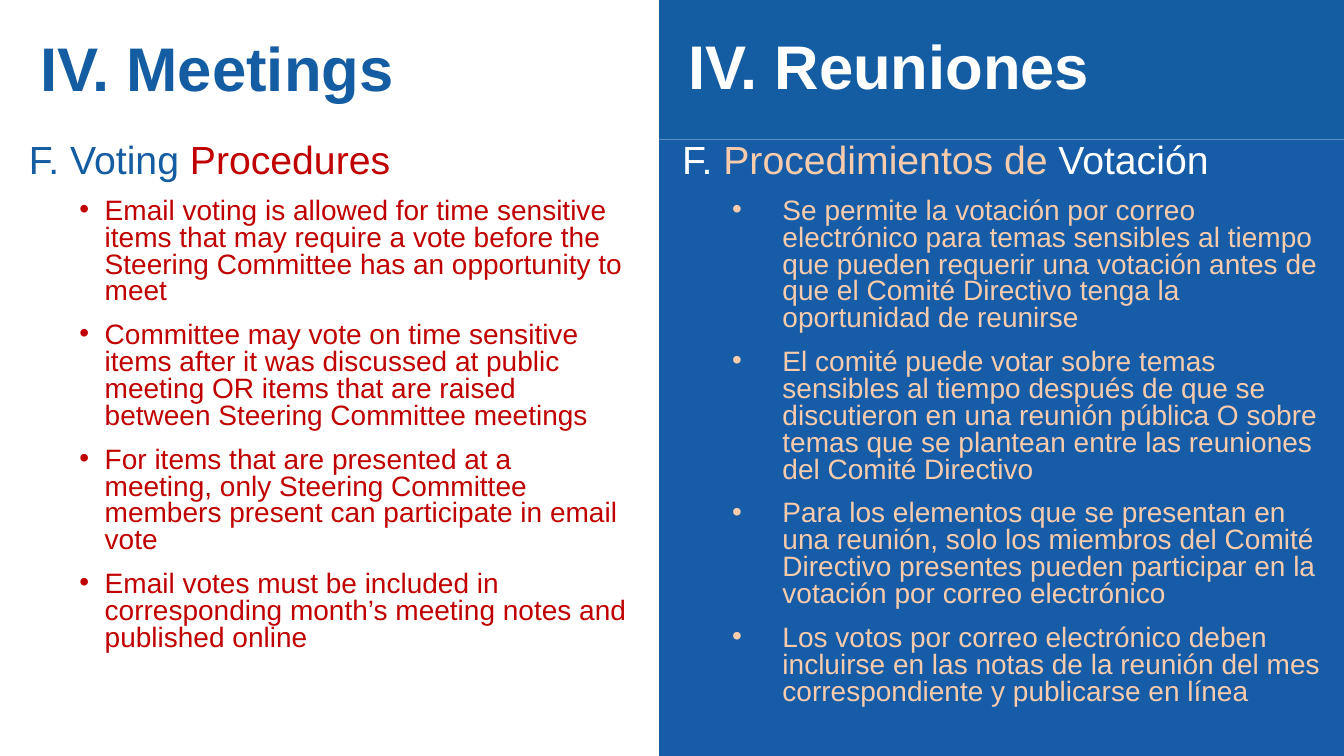
from lxml.etree import SubElement
from pptx import Presentation
from pptx.dml.color import RGBColor
from pptx.enum.shapes import MSO_SHAPE
from pptx.enum.text import MSO_ANCHOR, PP_ALIGN
from pptx.oxml.ns import qn
from pptx.util import Cm, Pt

BLUE, RED, WHITE, PEACH = "145DA2", "C00000", "FFFFFF", "F8CBAD"
WIDE, HIGH, HEAD, SPLIT = 33.87, 19.05, 3.51, 16.61

HEADING = {"line_spacing": 0.9, "alignment": PP_ALIGN.LEFT}
BODY = {"line_spacing": 0.8, "alignment": PP_ALIGN.LEFT,
        "space_before": Pt(6), "space_after": Pt(6)}


def color(target, value):
    target.rgb = RGBColor.from_string(value)


def write(para, runs, size, style, left=0, hang=0, bold=False):
    for name, value in style.items():
        setattr(para, name, value)
    props = para._p.get_or_add_pPr()
    props.set("marL", str(Cm(left)))
    props.set("indent", str(Cm(-hang)))
    if hang:
        SubElement(props, qn("a:buFont"), typeface="Arial")
        SubElement(props, qn("a:buChar"), char="•")
    for text, tint in runs:
        run = para.add_run()
        run.text = text
        for name, value in {"name": "Arial", "size": Pt(size), "bold": bold}.items():
            setattr(run.font, name, value)
        color(run.font.color, tint)


panels = [
    {"title": "IV. Meetings", "ink": BLUE, "accent": RED,
     "head": (0.76, 0.05, 14.4, HEAD), "body": (0.48, HEAD, 15.57, HIGH - HEAD),
     "fills": None, "inset": (0, 0), "left": 1.91, "hang": 0.64,
     "topic": [("F. Voting ", BLUE), ("Procedures", RED)],
     "items": [
         "Email voting is allowed for time sensitive items that may require a vote before the Steering Committee has an opportunity to meet",
         "Committee may vote on time sensitive items after it was discussed at public meeting OR items that are raised between Steering Committee meetings",
         "For items that are presented at a meeting, only Steering Committee members present can participate in email vote",
         "Email votes must be included in corresponding month’s meeting notes and published online"]},
    {"title": "IV. Reuniones", "ink": WHITE, "accent": PEACH,
     "head": (SPLIT, 0, WIDE - SPLIT, HEAD),
     "body": (SPLIT, HEAD, WIDE - SPLIT, HIGH - HEAD),
     "fills": (BLUE, "175CA7"), "inset": (0.48, 0.33), "left": 2.86, "hang": 1.27,
     "topic": [("F. ", WHITE), ("Procedimientos de ", PEACH), ("Votación", WHITE)],
     "items": [
         "Se permite la votación por correo electrónico para temas sensibles al tiempo que pueden requerir una votación antes de que el Comité Directivo tenga la oportunidad de reunirse",
         "El comité puede votar sobre temas sensibles al tiempo después de que se discutieron en una reunión pública O sobre temas que se plantean entre las reuniones del Comité Directivo",
         "Para los elementos que se presentan en una reunión, solo los miembros del Comité Directivo presentes pueden participar en la votación por correo electrónico",
         "Los votos por correo electrónico deben incluirse en las notas de la reunión del mes correspondiente y publicarse en línea"]},
]

deck = Presentation()
deck.slide_width, deck.slide_height = Cm(WIDE), Cm(HIGH)
slide = deck.slides.add_slide(deck.slide_layouts[6])

for panel in panels:
    frames = []
    for index, part in enumerate(("head", "body")):
        box = [Cm(length) for length in panel[part]]
        if panel["fills"]:
            shape = slide.shapes.add_shape(MSO_SHAPE.RECTANGLE, *box)
            shape.shadow.inherit = False
            shape.fill.solid()
            color(shape.fill.fore_color, panel["fills"][index])
            shape.line.fill.background()
        else:
            shape = slide.shapes.add_textbox(*box)
        frame = shape.text_frame
        frame.word_wrap = True
        frame.vertical_anchor = (MSO_ANCHOR.MIDDLE, MSO_ANCHOR.TOP)[index]
        frames.append(frame)
    head, body = frames
    write(head.paragraphs[0], [(panel["title"], panel["ink"])], 44, HEADING,
          panel["inset"][0], bold=True)
    write(body.paragraphs[0], panel["topic"], 28, BODY, panel["inset"][1])
    for item in panel["items"]:
        para = body.add_paragraph()
        para.level = 1
        write(para, [(item, panel["accent"])], 20, BODY, panel["left"], panel["hang"])

deck.save("out.pptx")
